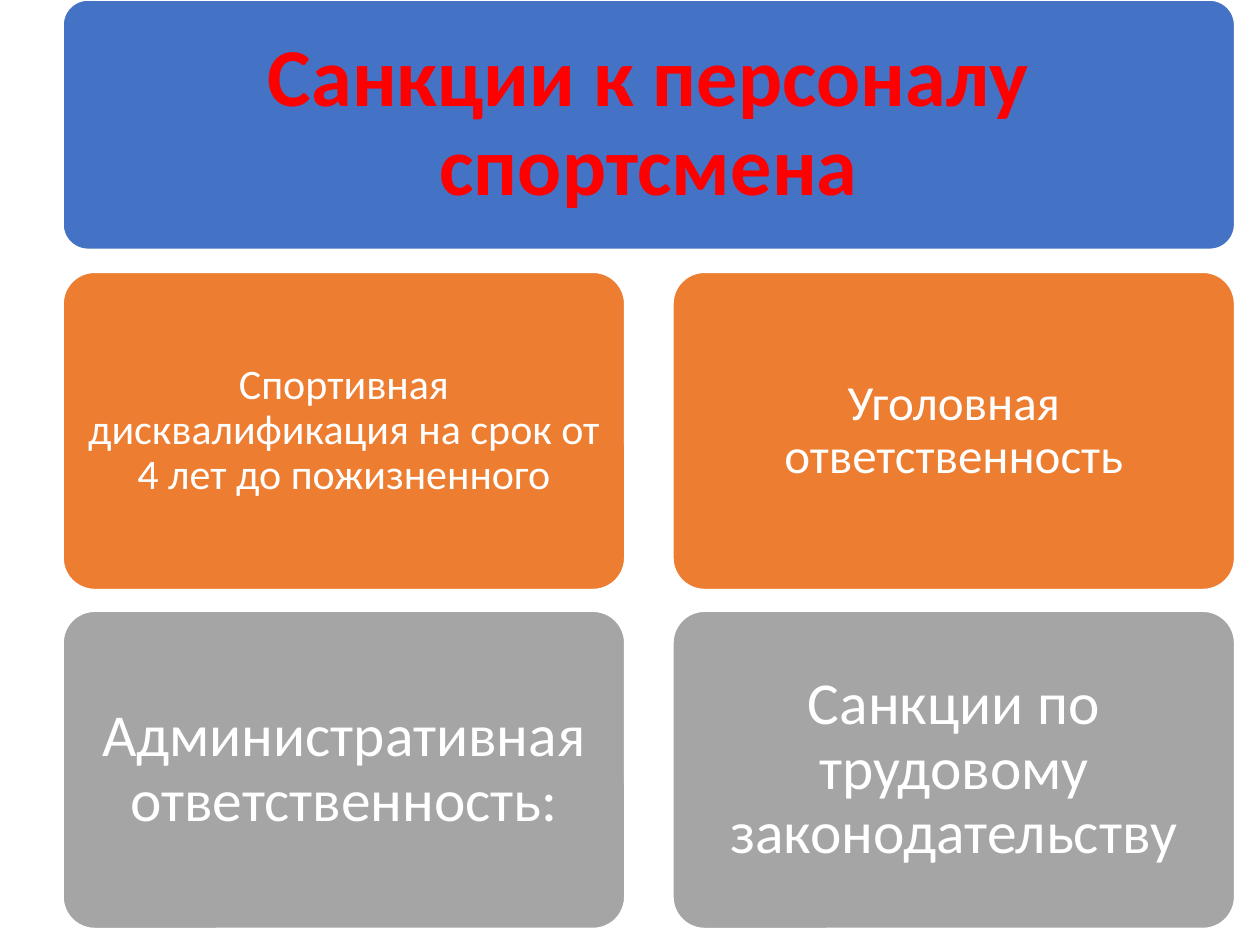
from pptx import Presentation
from pptx.dml.color import RGBColor
from pptx.enum.shapes import MSO_SHAPE
from pptx.enum.text import MSO_ANCHOR, PP_ALIGN
from pptx.util import Inches, Pt

COLORS = {
    "title": "4472C4",
    "sport": "ED7D31",
    "law": "A5A5A5",
    "red": "FF0000",
    "white": "FFFFFF",
}


class SlideBuilder:
    """Holds the common style and the current slide."""

    font = "Calibri"
    corner = 0.1
    line_spacing = 0.9

    def __init__(self, slide):
        self.slide = slide

    def color(self, name):
        return RGBColor.from_string(COLORS[name])

    def card(self, box, text, fill, size, inset, color="white", bold=False):
        sp = self.slide.shapes.add_shape(
            MSO_SHAPE.ROUNDED_RECTANGLE, *(Inches(v) for v in box))
        sp.adjustments[0] = self.corner
        sp.shadow.inherit = False
        sp.fill.solid()
        sp.fill.fore_color.rgb = self.color(fill)
        sp.line.color.rgb = self.color("white")
        sp.line.width = Pt(1)

        tf = sp.text_frame
        tf.word_wrap = True
        tf.vertical_anchor = MSO_ANCHOR.MIDDLE
        tf.margin_left = tf.margin_right = Inches(inset)
        tf.margin_top = tf.margin_bottom = Inches(inset)
        p = tf.paragraphs[0]
        p.alignment = PP_ALIGN.CENTER
        p.line_spacing = self.line_spacing
        r = p.add_run()
        r.text = text
        r.font.name = self.font
        r.font.size = Pt(size)
        r.font.bold = bold
        r.font.color.rgb = self.color(color)


def main():
    prs = Presentation()
    prs.slide_width, prs.slide_height = Inches(10), Inches(7.5)
    s = SlideBuilder(prs.slides.add_slide(prs.slide_layouts[6]))

    # Title card
    left, width = 0.5, 9.3
    s.card((left, 0, width, 1.98), "Санкции к персоналу спортсмена",
           "title", 47, 0.2, color="red", bold=True)

    # Two by two grid of sanctions: text, font size, inset
    top, card_w, card_h, row_step = 2.16, 4.46, 2.52, 2.69
    col_step = width - card_w
    rows = [
        ("sport", [
            ("Спортивная дисквалификация на срок от 4 лет до пожизненного",
             24, 0.1),
            ("Уголовная ответственность", 28, 0.12),
        ]),
        ("law", [
            ("Административная ответственность:", 34, 0.14),
            ("Санкции по трудовому законодательству", 34, 0.14),
        ]),
    ]
    for i, (fill, cards) in enumerate(rows):
        for j, (text, size, inset) in enumerate(cards):
            box = (left + j * col_step, top + i * row_step, card_w, card_h)
            s.card(box, text, fill, size, inset)

    prs.save("out.pptx")


if __name__ == "__main__":
    main()
